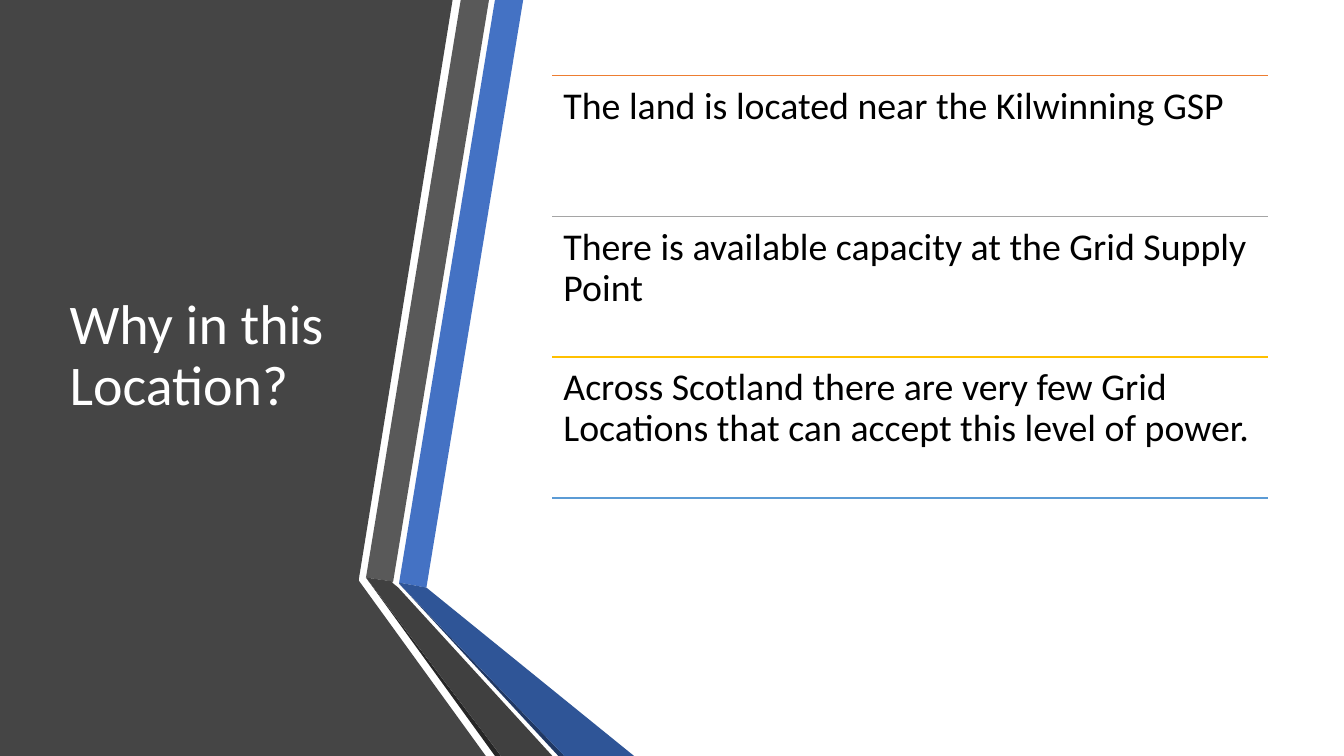
from lxml import etree
from pptx import Presentation, util as u
from pptx.dml.color import RGBColor
from pptx.enum import shapes, text

WIDE, HIGH = u.Inches(13.333), u.Inches(7.5)
DRAWING = "{http://schemas.openxmlformats.org/drawingml/2006/main}"

# Ribbon outlines: colour, then corners in percent of slide width and height
BANDS = [
    ("454545", [(0, 0), (33.68, 0), (26.7, 76.67), (26.7, 76.8),
                (36.15, 100), (0, 100)]),
    ("4472C4", [(29.7, 77.07), (31.73, 77.73), (38.93, 0), (36.83, 0)]),
    ("595959", [(36.38, 0), (34.28, 0), (27.23, 76.4), (29.25, 76.93)]),
    ("262626", [(27.23, 76.4), (36.83, 100), (37.28, 100)]),
    ("203864", [(29.7, 77.2), (41.55, 100), (42, 100)]),
    ("2F5597", [(29.7, 77.2), (42, 100), (47.18, 100), (31.73, 77.73),
                (29.7, 77.07)]),
    ("404040", [(41.1, 100), (29.63, 77.73), (29.18, 77.07), (29.25, 76.93),
                (27.23, 76.4), (37.28, 100)]),
]

REASONS = [
    ("ED7D31", "The land is located near the Kilwinning GSP"),
    ("A5A5A5", "There is available capacity at the Grid Supply Point"),
    ("FFC000", "Across Scotland there are very few Grid Locations "
               "that can accept this level of power."),
]
LEFT, TOP, WIDTH, ROW = 41.1, 10, 53.25, 18.62


def color(code):
    return RGBColor.from_string(code)


def across(share):
    return u.Emu(round(WIDE * share / 100))


def down(share):
    return u.Emu(round(HIGH * share / 100))


class Deck:
    """Holds the style and the current slide; lengths are percent of the slide."""
    font = "Calibri"

    def __init__(self):
        self.show = Presentation()
        self.show.slide_width, self.show.slide_height = WIDE, HIGH
        self.slide = self.show.slides.add_slide(self.show.slide_layouts[5])
        self.shapes = self.slide.shapes

    def style(self, frame, words, size, code):
        frame.word_wrap = True
        frame.auto_size = text.MSO_AUTO_SIZE.NONE
        frame.text = words
        para = frame.paragraphs[0]
        para.alignment = text.PP_ALIGN.LEFT
        para.line_spacing = 0.9
        para.font.name, para.font.size = self.font, u.Pt(size)
        para.font.color.rgb = color(code)

    def band(self, code, points):
        spots = [(across(x), down(y)) for x, y in points]
        maker = self.shapes.build_freeform(*spots[0])
        maker.add_line_segments(spots[1:], close=True)
        shape = maker.convert_to_shape()
        shape.shadow.inherit = False
        shape.fill.solid()
        shape.fill.fore_color.rgb = color(code)
        shape.line.fill.background()

    def title(self, words, x, y, w, h):
        shape = self.shapes.title
        shape.left, shape.top = across(x), down(y)
        shape.width, shape.height = across(w), down(h)
        shape.text_frame.vertical_anchor = text.MSO_ANCHOR.MIDDLE
        self.style(shape.text_frame, words, 40, "FFFFFF")
        # Bring the title in front of the ribbon
        self.shapes._spTree.append(shape._element)

    def rule(self, code, x, y, w):
        line = self.shapes.add_connector(
            shapes.MSO_CONNECTOR.STRAIGHT,
            across(x), down(y), across(x + w), down(y))
        line.line.color.rgb = color(code)
        line.line.width = u.Pt(1)
        etree.SubElement(line._element.spPr, DRAWING + "effectLst")

    def note(self, words, x, y, w, h):
        box = self.shapes.add_textbox(across(x), down(y), across(w), down(h))
        frame = box.text_frame
        frame.margin_left = frame.margin_right = u.Inches(0.11)
        frame.margin_top = frame.margin_bottom = u.Inches(0.11)
        self.style(frame, words, 27, "000000")


def main():
    deck = Deck()
    for code, points in BANDS:
        deck.band(code, points)
    deck.title("Why in this Location?", 4.43, 10, 22.8, 74.4)
    for i, (code, words) in enumerate(REASONS):
        y = TOP + i * ROW
        deck.rule(code, LEFT, y, WIDTH)
        deck.note(words, LEFT, y, WIDTH, ROW)
    deck.rule("5B9BD5", LEFT, TOP + len(REASONS) * ROW, WIDTH)
    deck.show.save("out.pptx")


if __name__ == "__main__":
    main()
